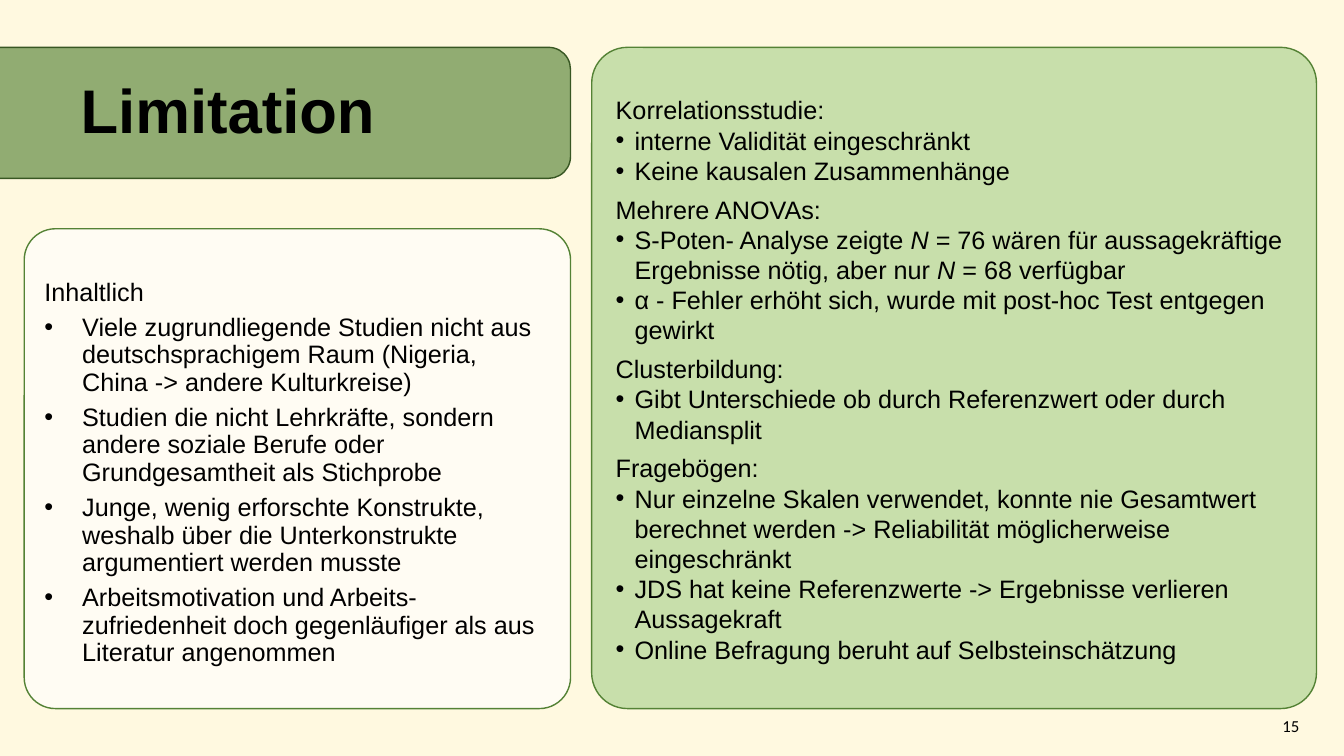
from lxml import etree
from pptx import Presentation
from pptx.dml.color import RGBColor
from pptx.enum.shapes import MSO_SHAPE
from pptx.enum.text import MSO_ANCHOR, MSO_AUTO_SIZE, PP_ALIGN
from pptx.oxml.ns import qn
from pptx.util import Pt

ROUNDED = MSO_SHAPE.ROUNDED_RECTANGLE
LEFT, RIGHT = PP_ALIGN.LEFT, PP_ALIGN.RIGHT
TOP, MIDDLE = MSO_ANCHOR.TOP, MSO_ANCHOR.MIDDLE
NO_FIT = MSO_AUTO_SIZE.NONE

CREAM, WHITE, BLACK = "FFF9E0", "FFFFFF", "000000"
GREEN, DARK_GREEN, LIGHT_GREEN = "548235", "385723", "A9D18E"
CARD_OPACITY = 64

# Boxes are left, top, width, height in points.
HEADER_BOX = (-15.84, 33.84, 423.36, 93.6)
CONTENT_BOX = (17.28, 163.44, 390.24, 342.72)
METHOD_BOX = (422.64, 33.84, 517.68, 472.32)
NUMBER_BOX = (719.28, 504, 216, 28.8)

CONTENT_LIMITS = [
    "Viele zugrundliegende Studien nicht aus deutschsprachigem Raum (Nigeria, China -> andere Kulturkreise)",
    "Studien die nicht Lehrkräfte, sondern andere soziale Berufe oder Grundgesamtheit als Stichprobe",
    "Junge, wenig erforschte Konstrukte, weshalb über die Unterkonstrukte argumentiert werden musste",
    "Arbeitsmotivation und Arbeits-zufriedenheit doch gegenläufiger als aus Literatur angenommen",
]

# Text between asterisks is italic.
METHOD_LIMITS = {
    "Korrelationsstudie:": [
        "interne Validität eingeschränkt",
        "Keine kausalen Zusammenhänge",
    ],
    "Mehrere ANOVAs:": [
        "S-Poten- Analyse zeigte *N* = 76 wären für aussagekräftige Ergebnisse nötig, aber nur *N* = 68 verfügbar",
        "α - Fehler erhöht sich, wurde mit post-hoc Test entgegen gewirkt",
    ],
    "Clusterbildung:": [
        "Gibt Unterschiede ob durch Referenzwert oder durch Mediansplit",
    ],
    "Fragebögen:": [
        "Nur einzelne Skalen verwendet, konnte nie Gesamtwert berechnet werden -> Reliabilität möglicherweise eingeschränkt",
        "JDS hat keine Referenzwerte -> Ergebnisse verlieren Aussagekraft",
        "Online Befragung beruht auf Selbsteinschätzung",
    ],
}


def paint(color_owner, color):
    color_owner.rgb = RGBColor.from_string(color)


def place(shape, left, top, width, height):
    shape.left, shape.top = Pt(left), Pt(top)
    shape.width, shape.height = Pt(width), Pt(height)


def prepare_frame(shape, anchor=TOP):
    frame = shape.text_frame
    frame.word_wrap = True
    frame.auto_size = NO_FIT
    frame.vertical_anchor = anchor
    return frame


def set_bullet(paragraph, indent):
    """Give the paragraph a hanging bullet, or none if indent is 0."""
    properties = paragraph._p.get_or_add_pPr()
    properties.set("marL", str(Pt(indent)))
    properties.set("indent", str(-Pt(indent)))
    if indent:
        font = etree.SubElement(properties, qn("a:buFont"))
        font.set("typeface", "Arial")
        etree.SubElement(properties, qn("a:buChar")).set("char", "•")
    else:
        etree.SubElement(properties, qn("a:buNone"))


def write(frame, text, size=18, font="Arial", bold=False, align=LEFT,
          spacing=1.0, before=0, indent=0):
    """Add one paragraph, using the empty first one if there is one."""
    first = frame.paragraphs[0]
    paragraph = frame.add_paragraph() if first.runs else first
    paragraph.alignment = align
    paragraph.line_spacing = spacing
    paragraph.space_before, paragraph.space_after = Pt(before), Pt(0)
    set_bullet(paragraph, indent)
    for index, part in enumerate(text.split("*")):
        run = paragraph.add_run()
        run.text = part
        run.font.name, run.font.size = font, Pt(size)
        run.font.bold, run.font.italic = bold, index % 2 == 1
        paint(run.font.color, BLACK)


def add_card(slide, box, fill, line, rounding):
    card = slide.shapes.add_shape(ROUNDED, *map(Pt, box))
    card.shadow.inherit = False
    card.adjustments[0] = rounding
    card.fill.solid()
    paint(card.fill.fore_color, fill)
    color = card._element.spPr.find(qn("a:solidFill"))[0]
    etree.SubElement(color, qn("a:alpha")).set("val", str(CARD_OPACITY * 1000))
    paint(card.line.color, line)
    card.line.width = Pt(1)
    # Cards lie behind the placeholders.
    title = slide.shapes.title._element
    title.addprevious(card._element)


def build_header(slide, box):
    left, top, width, height = box
    add_card(slide, box, GREEN, DARK_GREEN, 0.167)
    title = slide.shapes.title
    place(title, left + 66.24, top + 16.56, 372.24, 61.2)
    write(prepare_frame(title, MIDDLE), "Limitation", size=44, bold=True, spacing=0.9)


def build_content_limits(slide, box):
    left, top, width, height = box
    add_card(slide, box, WHITE, GREEN, 0.065)
    body = slide.placeholders[1]
    place(body, left + 7.2, top + 32.4, width - 15.12, 378.72)
    frame = prepare_frame(body)
    write(frame, "Inhaltlich", spacing=0.9, before=10)
    for limit in CONTENT_LIMITS:
        write(frame, limit, spacing=0.9, before=6, indent=27)


def build_method_limits(slide, box):
    left, top, width, height = box
    add_card(slide, box, LIGHT_GREEN, GREEN, 0.054)
    text_box = slide.shapes.add_textbox(
        Pt(left + 10.08), Pt(top + 30.24), Pt(width - 15.12), Pt(439.92))
    frame = prepare_frame(text_box)
    for index, (heading, limits) in enumerate(METHOD_LIMITS.items()):
        write(frame, heading, before=6 if index else 0)
        for limit in limits:
            write(frame, limit, indent=13.5)


def build_slide_number(slide, box):
    text_box = slide.shapes.add_textbox(*map(Pt, box))
    write(prepare_frame(text_box, MIDDLE), "15", size=12, font="Calibri", align=RIGHT)


def main():
    presentation = Presentation()
    presentation.slide_width, presentation.slide_height = Pt(960), Pt(540)
    slide = presentation.slides.add_slide(presentation.slide_layouts[1])
    slide.background.fill.solid()
    paint(slide.background.fill.fore_color, CREAM)
    build_content_limits(slide, CONTENT_BOX)
    build_header(slide, HEADER_BOX)
    build_method_limits(slide, METHOD_BOX)
    build_slide_number(slide, NUMBER_BOX)
    presentation.save("out.pptx")


if __name__ == "__main__":
    main()
